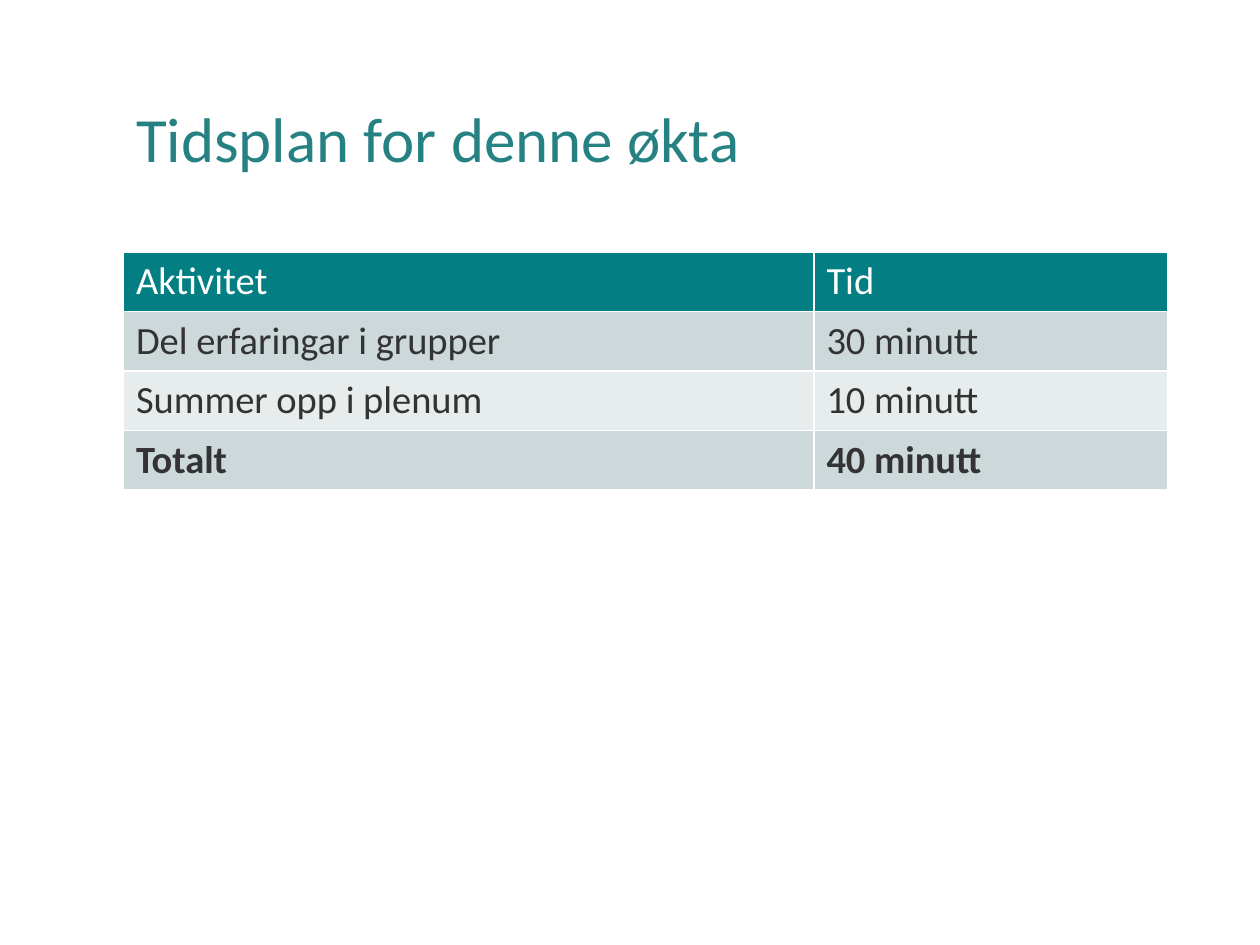
import pptx
import pptx.util
import pptx.dml.color
import pptx.enum.text

TITLE = "Tidsplan for denne økta"
ROWS = [
    ("Aktivitet", "Tid"),
    ("Del erfaringar i grupper", "30 minutt"),
    ("Summer opp i plenum", "10 minutt"),
    ("Totalt", "40 minutt"),
]
COLORS = {
    "title": "268183",
    "header": "037F83",
    "header_text": "FFFFFF",
    "odd": "CCD8D9",
    "even": "E7ECED",
    "text": "333333",
}
FONT = "Calibri"
LEFT, WIDTH = 0.98, 8.29
COLUMN_WIDTHS = (5.48, 2.81)
ROW_HEIGHT = 0.47

Inches = pptx.util.Inches


def rgb(name):
    return pptx.dml.color.RGBColor.from_string(COLORS[name])


def add_run(p, text, size, color, bold=False):
    r = p.add_run()
    r.text = text
    r.font.name = FONT
    r.font.size = pptx.util.Pt(size)
    r.font.bold = bold
    r.font.color.rgb = rgb(color)


def add_title(s):
    sp = s.shapes.title
    sp.left, sp.top = Inches(LEFT), Inches(0.4)
    sp.width, sp.height = Inches(WIDTH), Inches(1.45)
    tf = sp.text_frame
    tf.word_wrap = True
    tf.vertical_anchor = pptx.enum.text.MSO_ANCHOR.MIDDLE
    p = tf.paragraphs[0]
    p.alignment = pptx.enum.text.PP_ALIGN.LEFT
    p.line_spacing = 0.9
    add_run(p, TITLE, 36, "title")


def add_schedule(s):
    table = s.shapes.add_table(
        len(ROWS), len(COLUMN_WIDTHS), Inches(LEFT), Inches(2),
        Inches(WIDTH), Inches(ROW_HEIGHT * len(ROWS)),
    ).table
    for column, width in zip(table.columns, COLUMN_WIDTHS):
        column.width = Inches(width)
    for i, row in enumerate(ROWS):
        table.rows[i].height = Inches(ROW_HEIGHT)
        fill = "header" if i == 0 else "odd" if i % 2 else "even"
        color = "header_text" if i == 0 else "text"
        for j, text in enumerate(row):
            cell = table.cell(i, j)
            cell.fill.solid()
            cell.fill.fore_color.rgb = rgb(fill)
            p = cell.text_frame.paragraphs[0]
            add_run(p, text, 22, color, bold=i == len(ROWS) - 1)


def main():
    """Build the session schedule slide."""
    prs = pptx.Presentation()
    prs.slide_width, prs.slide_height = Inches(10), Inches(7.5)
    s = prs.slides.add_slide(prs.slide_layouts[5])
    add_title(s)
    add_schedule(s)
    prs.save("out.pptx")


if __name__ == "__main__":
    main()
